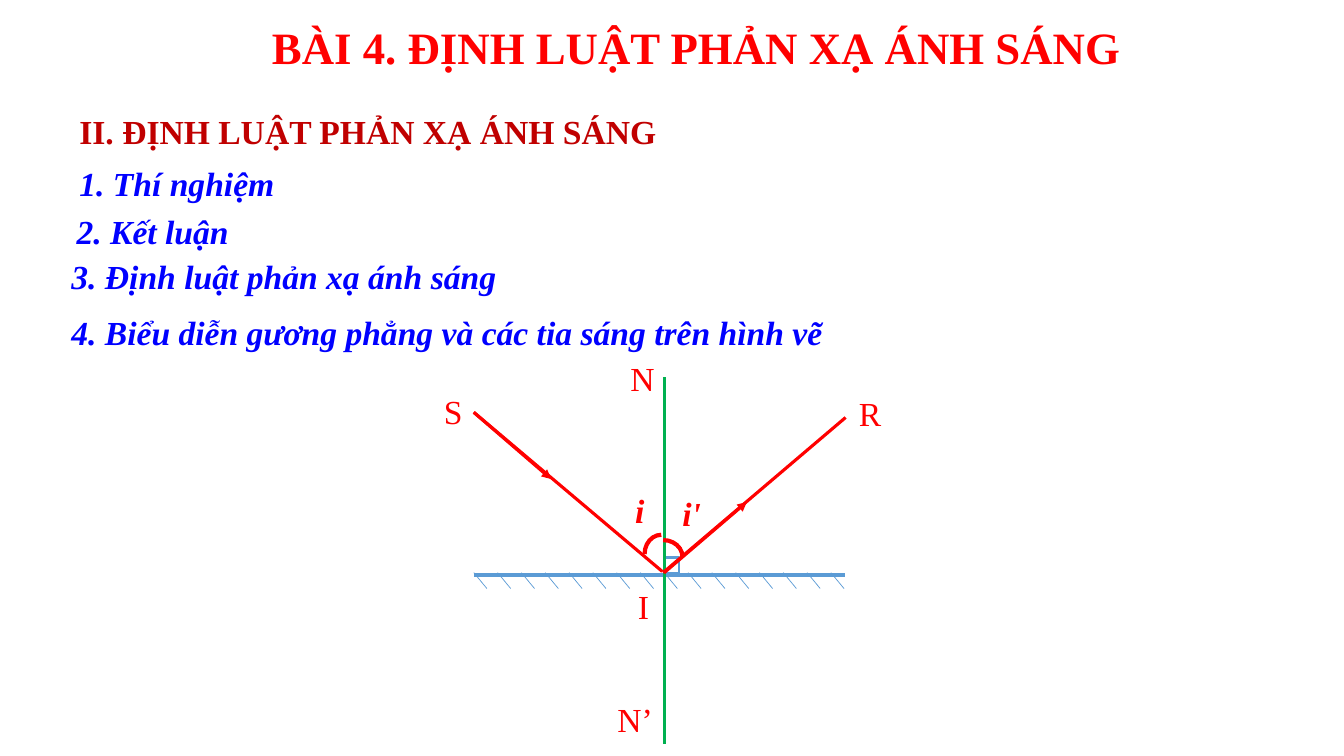
from dataclasses import dataclass

from lxml.etree import SubElement
from pptx import Presentation
from pptx.dml.color import RGBColor
from pptx.enum.shapes import MSO_CONNECTOR, MSO_SHAPE
from pptx.enum.text import MSO_ANCHOR, MSO_AUTO_SIZE, PP_ALIGN
from pptx.oxml.ns import qn
from pptx.util import Cm, Pt


@dataclass(frozen=True)
class Theme:
    font: str = "Times New Roman"
    red: str = "FF0000"
    dark_red: str = "C00000"
    blue: str = "0000FF"
    mirror: str = "5B9BD5"
    green: str = "00B050"
    white: str = "FFFFFF"
    title_size: float = 32
    text_size: float = 24
    hatch_width: float = 0.5
    square_width: float = 1.5
    ray_width: float = 2.25
    thick_width: float = 3


@dataclass(frozen=True)
class TextItem:
    text: str
    left: float
    top: float
    width: float
    height: float = 1.27
    color: str = Theme.red
    size: float = Theme.text_size
    bold: bool = False
    italic: bool = False
    align: PP_ALIGN = PP_ALIGN.CENTER
    wrap: bool = True
    spacing: float = 1.0
    side_inset: float = 0.25


@dataclass(frozen=True)
class Line:
    x1: float
    y1: float
    x2: float
    y2: float
    color: str = Theme.red
    width: float = Theme.ray_width
    arrow: bool = False


@dataclass(frozen=True)
class Outline:
    kind: MSO_SHAPE
    left: float
    top: float
    width: float
    height: float
    color: str
    line_width: float
    fill: str = ""
    rotation: float = 0


def item(text: str, left: float, top: float, width: float,
         height: float = 1.27, spacing: float = 1.07) -> TextItem:
    return TextItem(text, left, top, width, height, Theme.blue, bold=True,
                    italic=True, align=PP_ALIGN.JUSTIFY, wrap=False,
                    spacing=spacing)


def label(text: str, left: float, top: float, width: float = 1.04,
          strong: bool = False) -> TextItem:
    return TextItem(text, left, top, width, bold=strong, italic=strong,
                    side_inset=0)


TITLE = TextItem("BÀI 4. ĐỊNH LUẬT PHẢN XẠ ÁNH SÁNG", 2.92, 0.36, 29.26, 1.63,
                 size=Theme.title_size, bold=True)

HEADINGS = [
    TextItem("II. ĐỊNH LUẬT PHẢN XẠ ÁNH SÁNG", 1.75, 2.67, 16.03,
             color=Theme.dark_red, bold=True, align=PP_ALIGN.JUSTIFY),
    item("1. Thí nghiệm", 1.75, 3.91, 5.46),
    item("2. Kết luận", 1.68, 5.13, 4.39, 1.35),
    item("3. Định luật phản xạ ánh sáng", 1.55, 6.32, 11.33, spacing=1.0),
    item("4. Biểu diễn gương phẳng và các tia sáng trên hình vẽ",
         1.55, 7.67, 19.63, 1.35),
]

RIGHT_ANGLE = Outline(MSO_SHAPE.RECTANGLE, 16.74, 14.05, 0.38, 0.38,
                      Theme.mirror, Theme.square_width, Theme.white)

HATCH_STEP = 0.6
MIRROR = [Line(11.94, 14.48, 21.29, 14.48, Theme.mirror, Theme.thick_width)] + [
    Line(11.94 + k * HATCH_STEP, 14.43, 12.27 + k * HATCH_STEP, 14.83,
         Theme.mirror, Theme.hatch_width)
    for k in range(16)
]

RAYS = [
    Line(11.94, 10.39, 16.69, 14.4),
    Line(11.94, 10.39, 13.89, 12.07, arrow=True),
    Line(16.74, 9.5, 16.74, 18.75, Theme.green),
    Line(16.71, 14.43, 21.31, 10.52),
    Line(16.74, 14.43, 18.82, 12.65, arrow=True),
]

ANGLE_ARCS = [
    Outline(MSO_SHAPE.ARC, 16.23, 13.61, 0.97, 0.84, Theme.red,
            Theme.thick_width),
    Outline(MSO_SHAPE.ARC, 16.18, 13.54, 0.97, 0.84, Theme.red,
            Theme.thick_width, rotation=270),
]

LABELS = [
    label("S", 10.9, 9.73),
    label("I", 15.7, 14.63),
    label("R", 21.41, 9.78),
    label("N", 15.67, 8.89),
    label("N’", 15.27, 17.48, 1.47),
    label("i", 15.82, 12.22, 0.61, strong=True),
    label("i'", 16.92, 12.29, 1.02, strong=True),
]


def write_text(sp, t: TextItem) -> None:
    sp.left, sp.top, sp.width, sp.height = map(
        Cm, (t.left, t.top, t.width, t.height))
    tf = sp.text_frame
    tf.word_wrap = t.wrap
    tf.auto_size = MSO_AUTO_SIZE.NONE
    tf.vertical_anchor = MSO_ANCHOR.TOP
    tf.margin_left = tf.margin_right = Cm(t.side_inset)
    tf.text = t.text
    p = tf.paragraphs[0]
    p.alignment = t.align
    p.line_spacing = t.spacing
    p.font.name = Theme.font
    p.font.size = Pt(t.size)
    p.font.bold = t.bold
    p.font.italic = t.italic
    p.font.color.rgb = RGBColor.from_string(t.color)


def add_text(shapes, t: TextItem) -> None:
    write_text(shapes.add_textbox(0, 0, Cm(1), Cm(1)), t)


def add_line(shapes, line: Line) -> None:
    cn = shapes.add_connector(MSO_CONNECTOR.STRAIGHT, Cm(line.x1), Cm(line.y1),
                              Cm(line.x2), Cm(line.y2))
    cn.line.color.rgb = RGBColor.from_string(line.color)
    cn.line.width = Pt(line.width)
    if line.arrow:
        SubElement(cn.line._get_or_add_ln(), qn("a:tailEnd"), type="triangle")
    SubElement(cn._element.spPr, qn("a:effectLst"))


def add_outline(shapes, o: Outline) -> None:
    sp = shapes.add_shape(o.kind, Cm(o.left), Cm(o.top), Cm(o.width), Cm(o.height))
    sp.shadow.inherit = False
    sp.rotation = o.rotation
    sp.line.color.rgb = RGBColor.from_string(o.color)
    sp.line.width = Pt(o.line_width)
    if o.fill:
        sp.fill.solid()
        sp.fill.fore_color.rgb = RGBColor.from_string(o.fill)
    else:
        sp.fill.background()


def main() -> None:
    prs = Presentation()
    prs.slide_width, prs.slide_height = Cm(33.87), Cm(19.05)
    s = prs.slides.add_slide(prs.slide_layouts.get_by_name("Title Only"))
    write_text(s.shapes.title, TITLE)
    for heading in HEADINGS:
        add_text(s.shapes, heading)
    add_outline(s.shapes, RIGHT_ANGLE)
    mirror = s.shapes.add_group_shape()
    for line in MIRROR:
        add_line(mirror.shapes, line)
    for ray in RAYS:
        add_line(s.shapes, ray)
    for arc in ANGLE_ARCS:
        add_outline(s.shapes, arc)
    for name in LABELS:
        add_text(s.shapes, name)
    prs.save("out.pptx")


if __name__ == "__main__":
    main()
